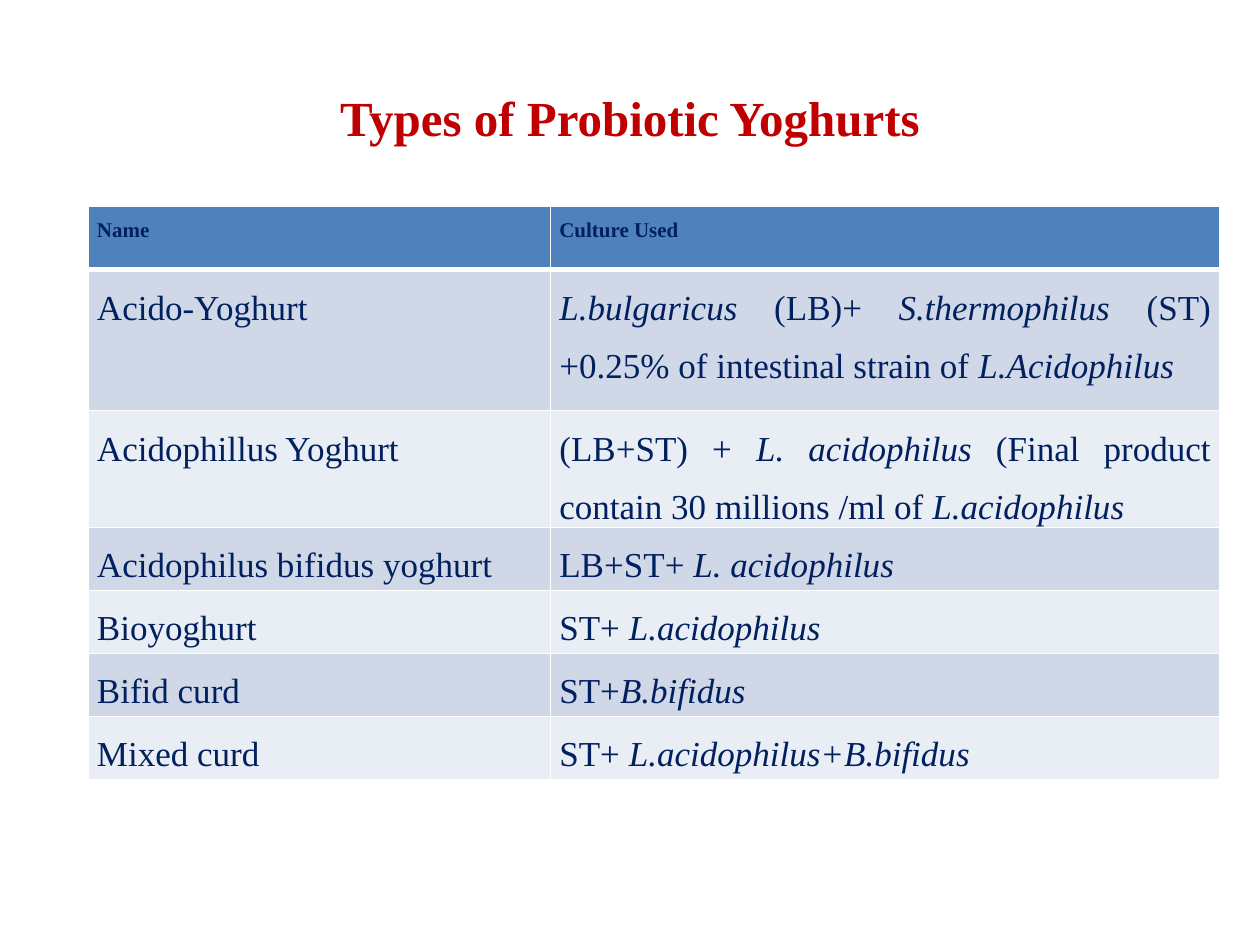
from lxml import etree
from pptx import Presentation
from pptx.dml.color import RGBColor
from pptx.enum.text import MSO_ANCHOR, PP_ALIGN
from pptx.oxml.ns import qn
from pptx.util import Inches, Pt

CENTER = PP_ALIGN.CENTER
JUSTIFY = PP_ALIGN.JUSTIFY
MIDDLE = MSO_ANCHOR.MIDDLE
TITLE_ONLY = 5

COLUMNS = [3.67, 5.31]
ROW_HEIGHTS = [0.5, 1.12, 0.74, 0.5, 0.5, 0.5, 0.5]
HEADER = ["Name", "Culture Used"]
YOGHURTS = [
    ("Acido-Yoghurt", [("L.bulgaricus ", True), ("(LB)+ ", False),
                       ("S.thermophilus ", True),
                       ("(ST)+0.25% of intestinal strain of ", False),
                       ("L.Acidophilus", True)]),
    ("Acidophillus Yoghurt", [("(LB+ST) + ", False), ("L. acidophilus ", True),
                              ("(Final product contain 30 millions /ml of ", False),
                              ("L.acidophilus", True)]),
    ("Acidophilus bifidus yoghurt", [("LB+ST+ ", False), ("L. acidophilus", True)]),
    ("Bioyoghurt", [("ST+ ", False), ("L.acidophilus", True)]),
    ("Bifid curd", [("ST+", False), ("B.bifidus", True)]),
    ("Mixed curd", [("ST+ ", False), ("L.acidophilus+B.bifidus", True)]),
]


def rgb(value):
    return RGBColor.from_string(value)


class Deck:
    font = "Times New Roman"
    red, navy, white = "C00000", "002060", "FFFFFF"
    header_fill = "4F81BD"
    bands = ["D0D8E8", "E9EDF4"]

    def __init__(self, prs):
        self.s = prs.slides.add_slide(prs.slide_layouts[TITLE_ONLY])

    def format_run(self, r, size, color, bold=False, italic=False):
        r.font.name = self.font
        r.font.size = Pt(size)
        r.font.bold = bold
        r.font.italic = italic
        r.font.color.rgb = rgb(color)

    def title(self, text, x, y, w, h):
        sp = self.s.shapes.title
        sp.left, sp.top, sp.width, sp.height = map(Inches, (x, y, w, h))
        tf = sp.text_frame
        tf.text = text
        tf.vertical_anchor = MIDDLE
        p = tf.paragraphs[0]
        p.alignment = CENTER
        self.format_run(p.runs[0], 28, self.red, bold=True)

    def borders(self, cell, bottom):
        tc_pr = cell._tc.get_or_add_tcPr()
        for side, width in (("L", 1), ("R", 1), ("T", 1), ("B", bottom)):
            ln = etree.SubElement(tc_pr, qn(f"a:ln{side}"), w=str(Pt(width)))
            fill = etree.SubElement(ln, qn("a:solidFill"))
            etree.SubElement(fill, qn("a:srgbClr"), val=self.white)

    def cell(self, cell, parts, fill, size=20, bold=False, bottom=1):
        self.borders(cell, bottom)
        cell.fill.solid()
        cell.fill.fore_color.rgb = rgb(fill)
        cell.margin_left = cell.margin_right = Inches(0.07)
        cell.margin_top = cell.margin_bottom = 0
        p = cell.text_frame.paragraphs[0]
        p.alignment = JUSTIFY
        p.line_spacing = 1.5
        p.space_after = Pt(10)
        for text, italic in parts:
            r = p.add_run()
            r.text = text
            self.format_run(r, size, self.navy, bold, italic)

    def table(self, x, y, columns, heights, header, rows):
        table = self.s.shapes.add_table(
            len(heights), len(columns), Inches(x), Inches(y),
            Inches(sum(columns)), Inches(sum(heights))).table
        for column, width in zip(table.columns, columns):
            column.width = Inches(width)
        for row, height in zip(table.rows, heights):
            row.height = Inches(height)
        for j, text in enumerate(header):
            self.cell(table.cell(0, j), [(text, False)], self.header_fill,
                      size=12, bold=True, bottom=3)
        for i, (name, culture) in enumerate(rows):
            fill = self.bands[i % 2]
            self.cell(table.cell(i + 1, 0), [(name, False)], fill)
            self.cell(table.cell(i + 1, 1), culture, fill)


def main():
    prs = Presentation()
    prs.slide_width, prs.slide_height = Inches(10), Inches(7.5)
    deck = Deck(prs)
    deck.title("Types of Probiotic Yoghurts", 0.5, 0.3, 9, 1.25)
    deck.table(0.7, 1.64, COLUMNS, ROW_HEIGHTS, HEADER, YOGHURTS)
    prs.save("out.pptx")


if __name__ == "__main__":
    main()
